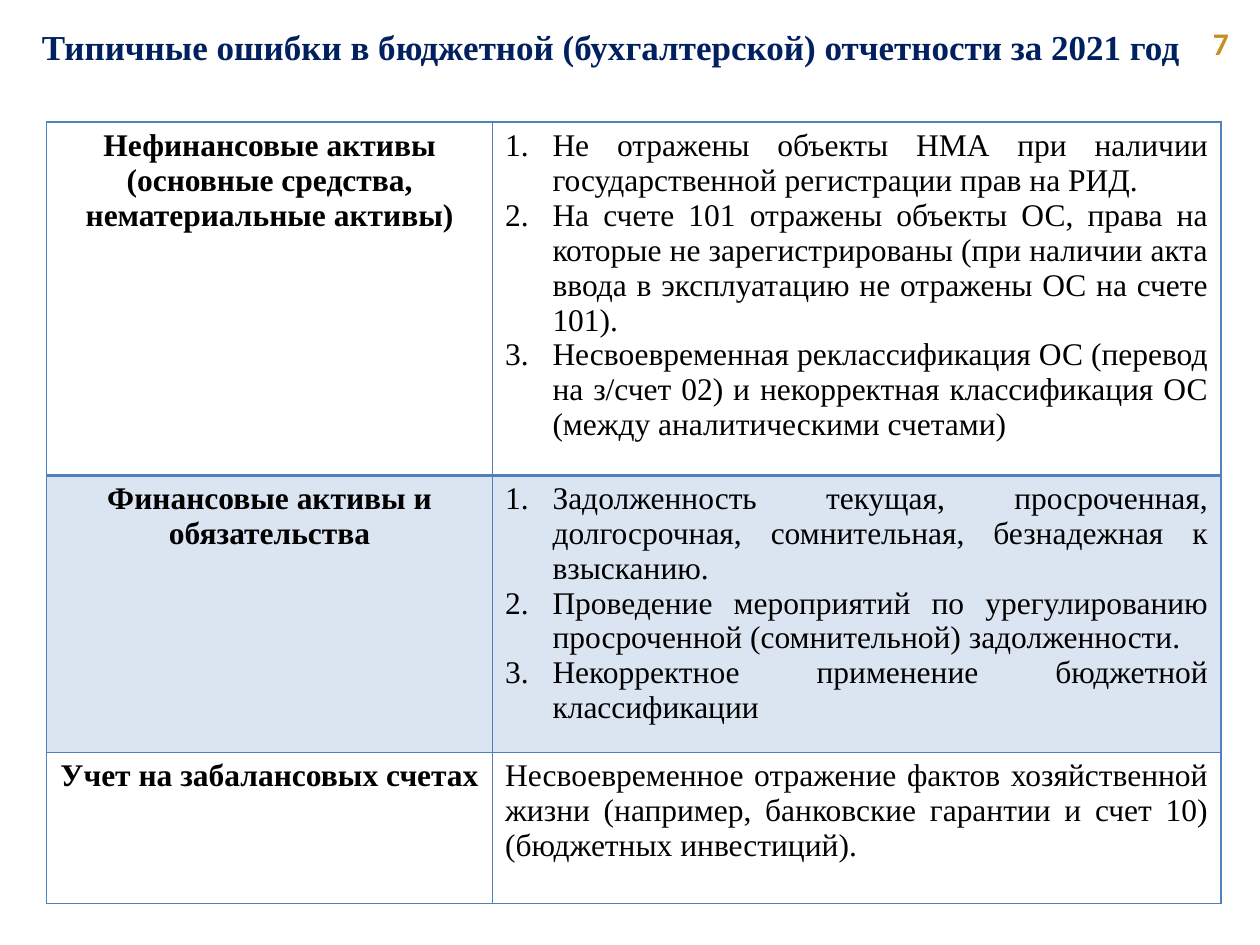
from dataclasses import dataclass

import pptx
import pptx.dml.color
import pptx.enum.text
import pptx.oxml
import pptx.oxml.ns
import pptx.util

ALIGN = pptx.enum.text.PP_ALIGN
ANCHOR = pptx.enum.text.MSO_ANCHOR


@dataclass(frozen=True)
class Theme:
    title_color: str = "002060"
    number_color: str = "C79023"
    text_color: str = "000000"
    accent: str = "4F81BD"
    band_opacity: int = 20
    serif: str = "Times New Roman"
    sans: str = "Calibri"
    title_size: int = 20
    body_size: int = 18
    thin: int = 1
    thick: int = 2


@dataclass(frozen=True)
class Box:
    """Place on a grid of 100 columns and 75 rows."""
    left: float
    top: float
    width: float
    height: float


@dataclass(frozen=True)
class Section:
    heading: str
    errors: list[str]
    height: float
    banded: bool = False


THEME = Theme()
GRID_COLUMNS = 100
SLIDE_WIDTH = pptx.util.Inches(10)
SLIDE_HEIGHT = pptx.util.Inches(7.5)

TITLE_BOX = Box(2.1, 1.5, 92.8, 4.4)
NUMBER_BOX = Box(94.7, 1.4, 3.8, 4)
TABLE_LEFT, TABLE_TOP = 3.7, 9.7
TABLE_COLUMNS = (35.4, 57.8)
LIST_INDENT = 3.75

SECTIONS = [
    Section("Нефинансовые активы (основные средства, нематериальные активы)", [
        "Не отражены объекты НМА при наличии государственной регистрации прав на РИД.",
        "На счете 101 отражены объекты ОС, права на которые не зарегистрированы "
        "(при наличии акта ввода в эксплуатацию не отражены ОС на счете 101).",
        "Несвоевременная реклассификация ОС (перевод на з/счет 02) и некорректная "
        "классификация ОС (между аналитическими счетами)",
    ], 28),
    Section("Финансовые активы и обязательства", [
        "Задолженность текущая, просроченная, долгосрочная, сомнительная, "
        "безнадежная к взысканию.",
        "Проведение мероприятий по урегулированию просроченной (сомнительной) "
        "задолженности.",
        "Некорректное применение бюджетной классификации",
    ], 22, banded=True),
    Section("Учет на забалансовых счетах", [
        "Несвоевременное отражение фактов хозяйственной жизни (например, банковские "
        "гарантии и счет 10) (бюджетных инвестиций).",
    ], 12),
]


def grid(cells: float) -> int:
    return round(SLIDE_WIDTH * cells / GRID_COLUMNS)


def place(shape, box: Box) -> None:
    shape.left, shape.top = grid(box.left), grid(box.top)
    shape.width, shape.height = grid(box.width), grid(box.height)


def format_paragraph(paragraph, align, font: str, size: int, color: str, bold: bool) -> None:
    paragraph.alignment = align
    for run in paragraph.runs:
        run.font.name = font
        run.font.size = pptx.util.Pt(size)
        run.font.bold = bold
        run.font.color.rgb = pptx.dml.color.RGBColor.from_string(color)


def number_paragraph(paragraph) -> None:
    properties = paragraph._p.get_or_add_pPr()
    properties.set("marL", str(grid(LIST_INDENT)))
    properties.set("indent", str(-grid(LIST_INDENT)))
    numbering = pptx.oxml.parse_xml(
        f'<a:buAutoNum {pptx.oxml.ns.nsdecls("a")} type="arabicPeriod"/>')
    properties.append(numbering)


def set_borders(cell, widths: dict[str, int]) -> None:
    properties = cell._tc.get_or_add_tcPr()
    for position, (side, width) in enumerate(widths.items()):
        properties.insert(position, pptx.oxml.parse_xml(
            f'<a:ln{side} {pptx.oxml.ns.nsdecls("a")} w="{pptx.util.Pt(width)}">'
            f'<a:solidFill><a:srgbClr val="{THEME.accent}"/></a:solidFill></a:ln{side}>'))


def fill_cell(cell, banded: bool) -> None:
    if not banded:
        cell.fill.background()
        return
    cell.fill.solid()
    cell.fill.fore_color.rgb = pptx.dml.color.RGBColor.from_string(THEME.accent)
    color = cell._tc.tcPr.find(".//" + pptx.oxml.ns.qn("a:srgbClr"))
    color.append(pptx.oxml.parse_xml(
        f'<a:alpha {pptx.oxml.ns.nsdecls("a")} val="{THEME.band_opacity * 1000}"/>'))


def write_cell(cell, lines: list[str], align, bold: bool) -> None:
    cell.text_frame.text = "\n".join(lines)
    for paragraph in cell.text_frame.paragraphs:
        format_paragraph(paragraph, align, THEME.serif, THEME.body_size,
                         THEME.text_color, bold)
        if len(lines) > 1:
            number_paragraph(paragraph)


def add_title(slide, text: str) -> None:
    title = slide.shapes.title
    place(title, TITLE_BOX)
    frame = title.text_frame
    frame.text = text
    frame.auto_size = pptx.enum.text.MSO_AUTO_SIZE.NONE
    frame.vertical_anchor = ANCHOR.TOP
    format_paragraph(frame.paragraphs[0], ALIGN.CENTER, THEME.serif,
                     THEME.title_size, THEME.title_color, True)


def add_page_number(slide, text: str) -> None:
    shape = slide.shapes.add_textbox(0, 0, 0, 0)
    place(shape, NUMBER_BOX)
    frame = shape.text_frame
    frame.word_wrap = True
    frame.margin_left = grid(1.55)
    frame.text = text
    format_paragraph(frame.paragraphs[0], ALIGN.LEFT, THEME.sans,
                     THEME.body_size, THEME.number_color, True)


def add_error_table(slide, sections: list[Section]) -> None:
    table = slide.shapes.add_table(
        len(sections), len(TABLE_COLUMNS), grid(TABLE_LEFT), grid(TABLE_TOP),
        grid(sum(TABLE_COLUMNS)), grid(sum(section.height for section in sections))).table
    table.first_row = table.horz_banding = False
    for column, width in zip(table.columns, TABLE_COLUMNS):
        column.width = grid(width)
    for index, section in enumerate(sections):
        row = table.rows[index]
        row.height = grid(section.height)
        heading, errors = row.cells
        write_cell(heading, [section.heading], ALIGN.CENTER, True)
        write_cell(errors, section.errors, ALIGN.JUSTIFY, False)
        # A thick rule separates the first section from the rest
        widths = {"L": THEME.thin, "R": THEME.thin,
                  "T": THEME.thick if index == 1 else THEME.thin,
                  "B": THEME.thick if index == 0 else THEME.thin}
        for cell in (heading, errors):
            fill_cell(cell, section.banded)
            set_borders(cell, widths)


def main() -> None:
    presentation = pptx.Presentation()
    presentation.slide_width, presentation.slide_height = SLIDE_WIDTH, SLIDE_HEIGHT
    title_only = presentation.slide_layouts[5]
    slide = presentation.slides.add_slide(title_only)

    add_title(slide, "Типичные ошибки в бюджетной (бухгалтерской) отчетности за 2021 год")
    add_page_number(slide, "7")
    add_error_table(slide, SECTIONS)
    presentation.save("out.pptx")


if __name__ == "__main__":
    main()
